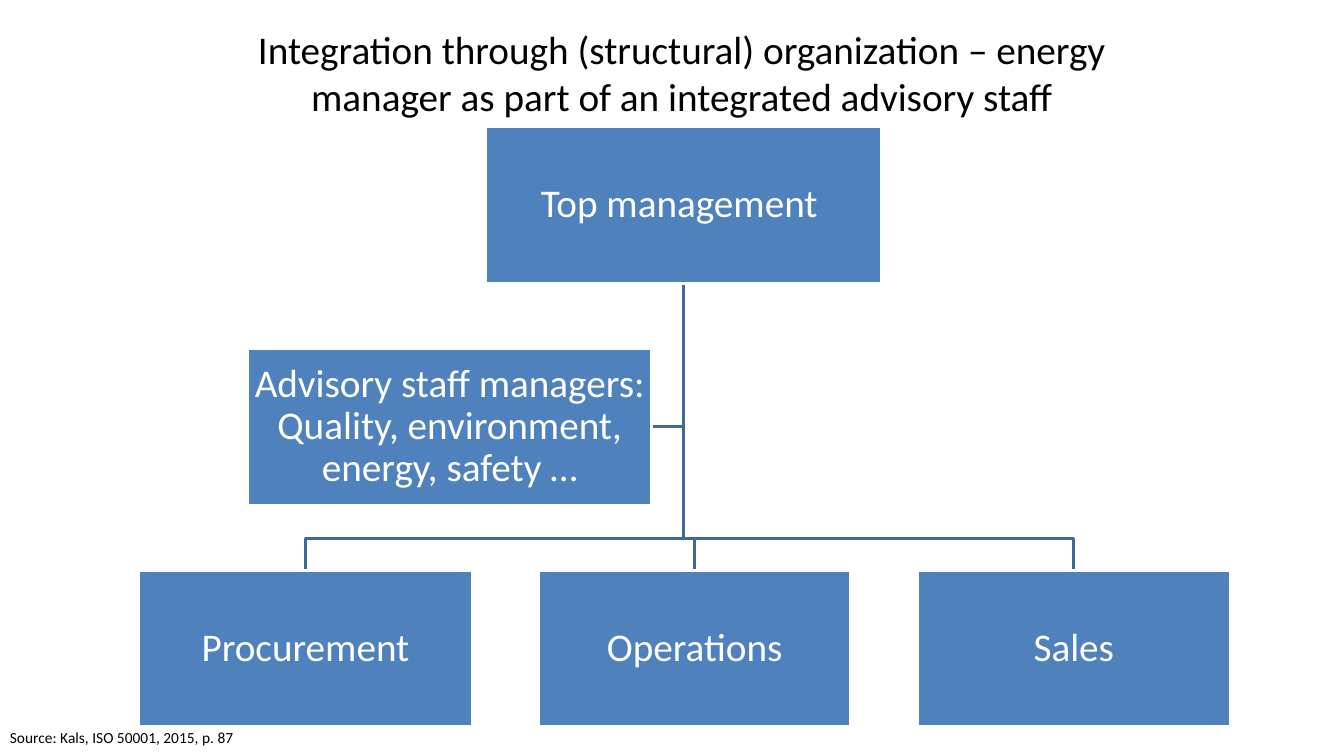
from dataclasses import dataclass

from pptx import Presentation
from pptx.dml.color import RGBColor as Rgb
from pptx.enum.shapes import MSO_SHAPE as Shape
from pptx.enum.text import MSO_ANCHOR as Anchor, PP_ALIGN as Align
from pptx.util import Inches, Pt


@dataclass(frozen=True)
class Theme:
    font: str = "Calibri"
    fill: Rgb = Rgb(0x4F, 0x81, 0xBD)
    link: Rgb = Rgb(0x3F, 0x67, 0x97)
    white: Rgb = Rgb(255, 255, 255)
    black: Rgb = Rgb(0, 0, 0)
    large: int = 28
    small: int = 11
    line: int = 2


@dataclass(frozen=True)
class Box:
    left: float
    top: float
    width: float
    height: float

    @property
    def mid(self):
        return self.left + self.width / 2

    @property
    def right(self):
        return self.left + self.width

    @property
    def base(self):
        return self.top + self.height

    def place(self):
        return [Inches(n) for n in (self.left, self.top, self.width, self.height)]


THEME = Theme()


def write(frame, text, size, color, align=Align.CENTER):
    frame.word_wrap = True
    para = frame.paragraphs[0]
    para.alignment = align
    run = para.add_run()
    run.text = text
    run.font.name = THEME.font
    run.font.size = Pt(size)
    run.font.color.rgb = color
    return para


def add_text(slide, box, text, size, anchor, align):
    frame = slide.shapes.add_textbox(*box.place()).text_frame
    frame.vertical_anchor = anchor
    write(frame, text, size, THEME.black, align)


def add_unit(slide, box, text):
    unit = slide.shapes.add_shape(Shape.RECTANGLE, *box.place())
    unit.shadow.inherit = False
    unit.fill.solid()
    unit.fill.fore_color.rgb = THEME.fill
    unit.line.color.rgb = THEME.white
    unit.line.width = Pt(THEME.line)
    frame = unit.text_frame
    frame.vertical_anchor = Anchor.MIDDLE
    frame.margin_left = frame.margin_right = Inches(0.02)
    frame.margin_top = frame.margin_bottom = Inches(0.02)
    write(frame, text, THEME.large, THEME.white).line_spacing = 0.9


def add_link(slide, points):
    """Draw an open line with square bends through the points."""
    start, *rest = [(Inches(x), Inches(y)) for x, y in points]
    pen = slide.shapes.build_freeform(*start)
    pen.add_line_segments(rest, close=False)
    link = pen.convert_to_shape()
    link.shadow.inherit = False
    link.fill.background()
    link.line.color.rgb = THEME.link
    link.line.width = Pt(THEME.line)


def add_chart(slide, box):
    """Place the top unit, its staff unit and the row of line units."""
    tall, gap = 1.55, 0.32
    row = box.base - tall
    top = Box(box.left + 3.45, box.top, 3.92, tall)
    staff = Box(box.left + 1.09, box.top + 2.2, 4, tall)
    lines = {
        "Procurement": Box(box.left, row, 3.32, tall),
        "Operations": Box(box.left + 3.97, row, 3.1, tall),
        "Sales": Box(box.right - 3.1, row, 3.1, tall),
    }

    root = (top.mid, top.base)
    level = staff.top + tall / 2
    add_link(slide, [root, (top.mid, level), (staff.right, level)])
    for unit in lines.values():
        bend = row - gap
        add_link(slide, [root, (top.mid, bend), (unit.mid, bend), (unit.mid, row)])

    units = {
        "Top management ": top,
        **lines,
        "Advisory staff managers: Quality, environment, energy, safety …": staff,
    }
    for text, unit in units.items():
        add_unit(slide, unit, text)


def main():
    deck = Presentation()
    deck.slide_width, deck.slide_height = Inches(13.33), Inches(7.5)
    slide = deck.slides.add_slide(deck.slide_layouts[6])
    add_chart(slide, Box(1.37, 1.26, 10.83, 5.95))
    add_text(
        slide, Box(2.45, 0.35, 8.62, 0.74),
        "Integration through (structural) organization – energy manager "
        "as part of an integrated advisory staff",
        THEME.large, Anchor.MIDDLE, Align.CENTER,
    )
    add_text(
        slide, Box(0, 7.17, 2.52, 0.29), "Source: Kals, ISO 50001, 2015, p. 87",
        THEME.small, Anchor.TOP, Align.LEFT,
    )
    deck.save("out.pptx")


if __name__ == "__main__":
    main()
